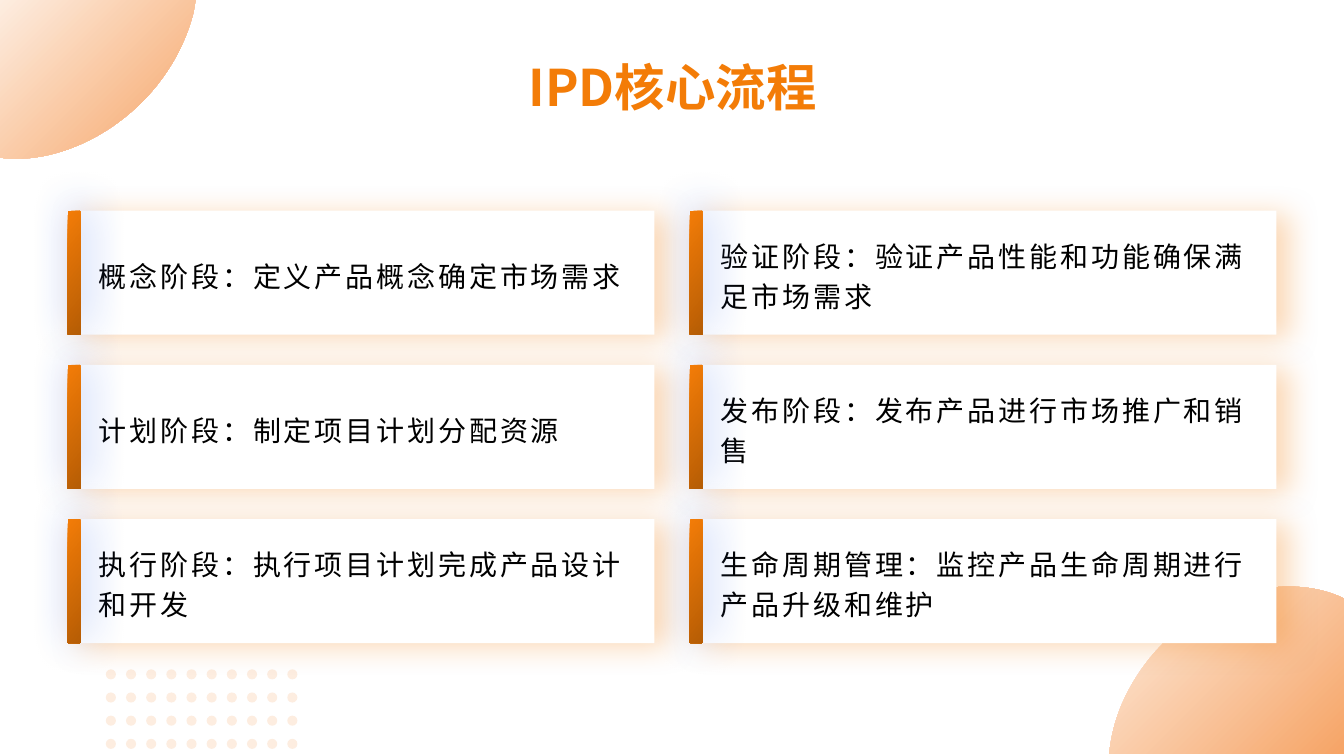
import dataclasses

import lxml.etree
import pptx
import pptx.dml.color
import pptx.enum.shapes
import pptx.enum.text
import pptx.oxml.ns
import pptx.util

Inches = pptx.util.Inches
qn = pptx.oxml.ns.qn


@dataclasses.dataclass(frozen=True)
class Theme:
    font: str = "Noto Sans CJK SC"
    title_size: int = 36
    body_size: int = 20
    spacing: int = 2
    ink: str = "000000"
    card: str = "FFFFFF"
    dot: str = "FDEDE0"
    corner: tuple = ("FDEDE0", "F6A466", 45)
    title: tuple = ("F37C07", "F6A466", 180)
    bar: tuple = ("F37C07", "B65D05", 130)
    card_shadow: tuple = ("F37C07", 30, 22, 9, 17)
    bar_shadow: tuple = ("4575F0", 45, 30, 5, 315)


def bezier(start, first, second, end, steps=24):
    for step in range(1, steps + 1):
        t = step / steps
        weights = ((1 - t) ** 3, 3 * t * (1 - t) ** 2, 3 * t * t * (1 - t), t ** 3)
        yield tuple(
            sum(w * point[axis] for w, point in zip(weights, (start, first, second, end)))
            for axis in (0, 1)
        )


class ProcessSlide:
    def __init__(self, slide, theme):
        self.slide = slide
        self.theme = theme

    def paint(self, fill, colour):
        if isinstance(colour, str):
            fill.solid()
            fill.fore_color.rgb = pptx.dml.color.RGBColor.from_string(colour)
            return
        *ends, angle = colour
        fill.gradient()
        fill.gradient_angle = 360 - angle
        for stop, end in zip(fill.gradient_stops, ends):
            stop.color.rgb = pptx.dml.color.RGBColor.from_string(end)

    def finish(self, shape, colour):
        shape.shadow.inherit = False
        shape.line.fill.background()
        self.paint(shape.fill, colour)

    def cast_shadow(self, shape, colour, alpha, blur, distance, angle):
        effects = shape.element.spPr.find(qn("a:effectLst"))
        outer = lxml.etree.SubElement(
            effects, qn("a:outerShdw"),
            blurRad=str(pptx.util.Pt(blur)), dist=str(pptx.util.Pt(distance)),
            dir=str(angle * 60000), algn="ctr", rotWithShape="0",
        )
        tone = lxml.etree.SubElement(outer, qn("a:srgbClr"), val=colour)
        lxml.etree.SubElement(tone, qn("a:alpha"), val=str(alpha * 1000))

    def corner(self, start, segments):
        points = [start]
        for segment in segments:
            points.extend([segment] if len(segment) == 2 else bezier(points[-1], *segment))
        (left, top), *rest = [(Inches(x), Inches(y)) for x, y in points]
        outline = self.slide.shapes.build_freeform(left, top)
        outline.add_line_segments(rest, close=True)
        self.finish(outline.convert_to_shape(), self.theme.corner)

    def dot(self, left, top, size=0.1):
        circle = self.slide.shapes.add_shape(
            pptx.enum.shapes.MSO_SHAPE.OVAL,
            Inches(left), Inches(top), Inches(size), Inches(size),
        )
        self.finish(circle, self.theme.dot)

    def panel(self, left, top, width, height, colour, shadow, rounding):
        turned_left = left + (width - height) / 2
        turned_top = top + (height - width) / 2
        panel = self.slide.shapes.add_shape(
            pptx.enum.shapes.MSO_SHAPE.ROUNDED_RECTANGLE,
            Inches(turned_left), Inches(turned_top), Inches(height), Inches(width),
        )
        panel.rotation = 270
        panel.adjustments[0] = rounding
        self.finish(panel, colour)
        self.cast_shadow(panel, *shadow)

    def text(self, wording, left, top, width, height, size, colour,
             bold=False, centred=False, right_inset=0.1, line_spacing=1.0, spacing=0):
        box = self.slide.shapes.add_textbox(
            Inches(left), Inches(top), Inches(width), Inches(height)
        )
        frame = box.text_frame
        frame.word_wrap = True
        frame.vertical_anchor = pptx.enum.text.MSO_ANCHOR.MIDDLE
        frame.margin_right = Inches(right_inset)
        paragraph = frame.paragraphs[0]
        paragraph.line_spacing = line_spacing
        if centred:
            paragraph.alignment = pptx.enum.text.PP_ALIGN.CENTER
        run = paragraph.add_run()
        run.text = wording
        run.font.size = pptx.util.Pt(size)
        run.font.bold = bold
        run.font.name = self.theme.font
        self.paint(run.font.fill, colour)
        properties = next(box.element.iter(qn("a:rPr")))
        lxml.etree.SubElement(properties, qn("a:ea"), typeface=self.theme.font)
        if spacing:
            properties.set("spc", str(spacing * 100))


STAGES = (
    ("概念阶段：定义产品概念确定市场需求",
     "计划阶段：制定项目计划分配资源",
     "执行阶段：执行项目计划完成产品设计和开发"),
    ("验证阶段：验证产品性能和功能确保满足市场需求",
     "发布阶段：发布产品进行市场推广和销售",
     "生命周期管理：监控产品生命周期进行产品升级和维护"),
)
COLUMN_LEFTS = (0.67, 6.84)
RIGHT_INSETS = (0, 0.1)
FIRST_TOP, ROW_STEP = 2.09, 1.53
CARD_WIDTH, CARD_HEIGHT = 5.82, 1.23
BAR_WIDTH = 0.13
TEXT_OFFSET, TEXT_WIDTH = 0.21, 5.58


def main():
    deck = pptx.Presentation()
    deck.slide_width, deck.slide_height = Inches(13.33), Inches(7.5)
    theme = Theme()
    page = ProcessSlide(deck.slides.add_slide(deck.slide_layouts[6]), theme)

    page.corner((0, 0), [
        (1.94, 0), (1.92, 0.12),
        ((1.84, 0.44), (1.66, 0.77), (1.38, 1.04)),
        ((0.98, 1.42), (0.48, 1.61), (0.04, 1.57)),
        (0, 1.56),
    ])
    page.corner((12.78, 5.82), [
        ((12.96, 5.82), (13.13, 5.85), (13.29, 5.92)),
        (13.33, 5.94), (13.33, 7.48), (11, 7.48), (11.01, 7.41),
        ((11.06, 7.04), (11.25, 6.66), (11.57, 6.35)),
        ((11.93, 6.01), (12.38, 5.82), (12.78, 5.82)),
    ])
    for column in range(10):
        for row in range(4):
            page.dot(1.05 + 0.2 * column, 6.64 + 0.23 * row)

    page.text("IPD核心流程", 0.67, 0.5, 12, 0.71, theme.title_size, theme.title,
              bold=True, centred=True)

    cells = [
        (left, FIRST_TOP + ROW_STEP * row, inset, stage)
        for left, inset, stages in zip(COLUMN_LEFTS, RIGHT_INSETS, STAGES)
        for row, stage in enumerate(stages)
    ]
    for left, top, _, _ in cells:
        page.panel(left, top, CARD_WIDTH, CARD_HEIGHT, theme.card, theme.card_shadow, 0)
    for left, top, inset, stage in cells:
        page.text(stage, left + TEXT_OFFSET, top, TEXT_WIDTH, CARD_HEIGHT,
                  theme.body_size, theme.ink, right_inset=inset,
                  line_spacing=1.2, spacing=theme.spacing)
    for left, top, _, _ in cells:
        page.panel(left, top, BAR_WIDTH, CARD_HEIGHT, theme.bar, theme.bar_shadow, 0.08)

    deck.save("out.pptx")


if __name__ == "__main__":
    main()
